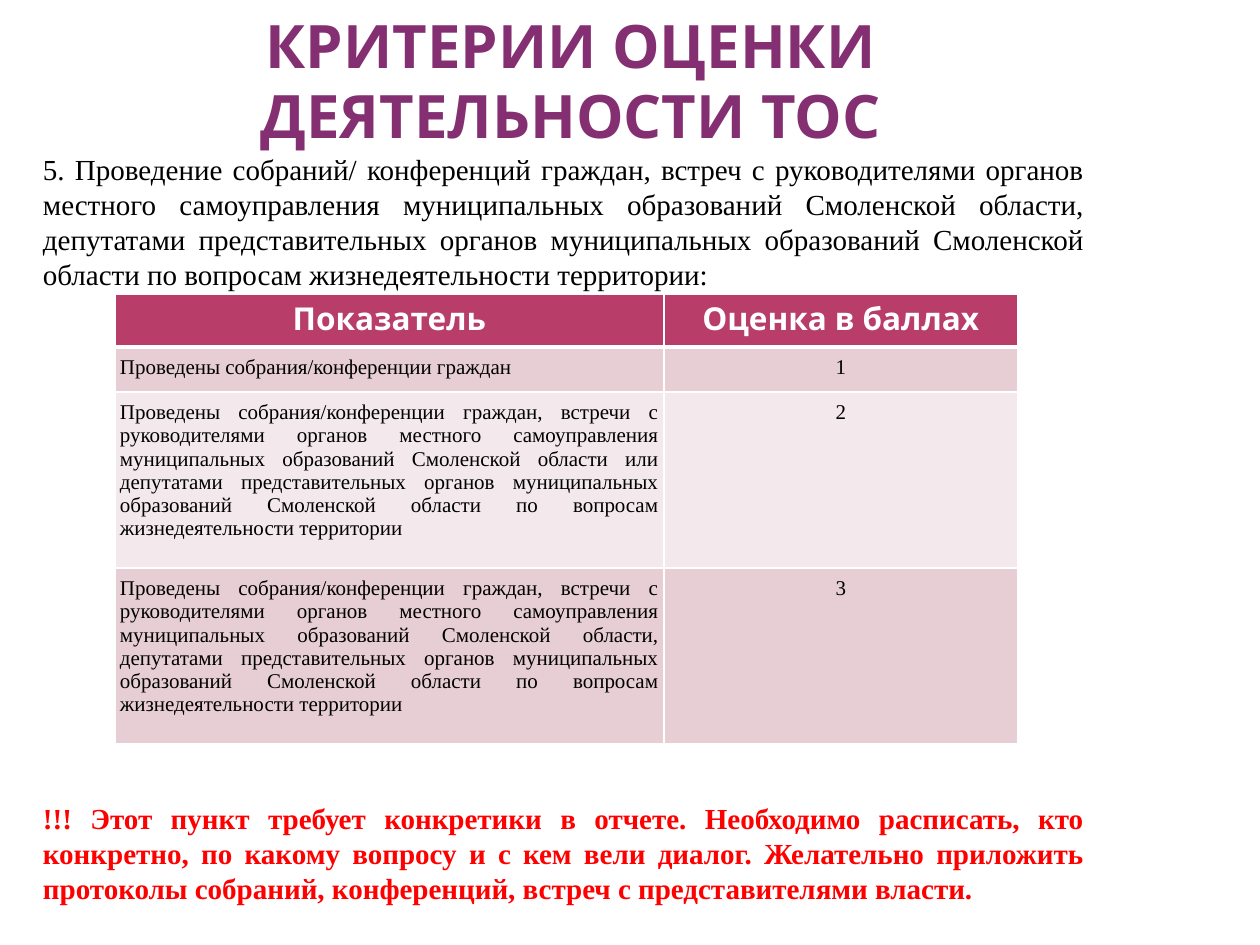
from pptx import Presentation
from pptx.dml.color import RGBColor
from pptx.enum.text import MSO_ANCHOR as Anchor, PP_ALIGN as Align
from pptx.oxml import parse_xml
from pptx.oxml.ns import nsdecls
from pptx.util import Pt

PX = 914400 // 126
SERIF, SANS = "Times New Roman", "Karla"


def px(n):
    return n * PX


def rgb(code):
    return RGBColor.from_string(code)


def put(para, text, size=12, font=SERIF, color="000000", bold=False,
        align=Align.JUSTIFY, line=None, before=0, indent=0):
    para.alignment = align
    para.space_before = Pt(before)
    if line:
        para.line_spacing = Pt(line)
    if indent:
        para._p.get_or_add_pPr().set("marL", str(px(indent)))
    run = para.add_run()
    run.text = text
    run.font.size = Pt(size)
    run.font.name = font
    run.font.bold = bold
    run.font.color.rgb = rgb(color)


class Deck:
    head, bands, rule = "B83D68", ("E6CED4", "F3E8EB"), "FFFFFF"

    def __init__(self, wide, high):
        self.prs = Presentation()
        self.prs.slide_width, self.prs.slide_height = px(wide), px(high)
        self.slide = self.prs.slides.add_slide(self.prs.slide_layouts[6])

    def box(self, x, y, w, h, paras, anchor=Anchor.TOP, pad=(13, 6)):
        frame = self.slide.shapes.add_textbox(px(x), px(y), px(w), px(h)).text_frame
        frame.word_wrap = True
        frame.vertical_anchor = anchor
        frame.margin_left = frame.margin_right = px(pad[0])
        frame.margin_top = frame.margin_bottom = px(pad[1])
        for i, (text, style) in enumerate(paras):
            put(frame.add_paragraph() if i else frame.paragraphs[0], text, **style)

    def edge(self, cell, side, width):
        cell._tc.get_or_add_tcPr().append(parse_xml(
            f'<a:ln{side} {nsdecls("a")} w="{Pt(width)}"><a:solidFill>'
            f'<a:srgbClr val="{self.rule}"/></a:solidFill></a:ln{side}>'))

    def cell(self, cell, text, row, col):
        for side in "LRTB":
            thick = (row, side) in ((0, "B"), (1, "T"))
            self.edge(cell, side, 3 if thick else 1)
        cell.fill.solid()
        cell.fill.fore_color.rgb = rgb(self.bands[(row - 1) % 2] if row else self.head)
        cell.margin_left = cell.margin_right = px(5 if row else 13)
        cell.margin_top = cell.margin_bottom = px(9 if row else 6)
        para = cell.text_frame.paragraphs[0]
        if row:
            put(para, text, line=13.3, align=Align.CENTER if col else Align.JUSTIFY)
        else:
            put(para, text, size=18, font=SANS, color="FFFFFF", bold=True,
                align=Align.CENTER, line=22)

    def table(self, x, y, cols, rows, data):
        grid = self.slide.shapes.add_table(
            len(rows), len(cols), px(x), px(y), px(sum(cols)), px(sum(rows))).table
        for col, w in zip(grid.columns, cols):
            col.width = px(w)
        for row, h in zip(grid.rows, rows):
            row.height = px(h)
        for r, texts in enumerate(data):
            for c, text in enumerate(texts):
                self.cell(grid.cell(r, c), text, r, c)


def main():
    deck = Deck(1260, 945)

    # Title
    deck.box(25, 26, 1091, 125, [
        ("КРИТЕРИИ ОЦЕНКИ ДЕЯТЕЛЬНОСТИ ТОС",
         dict(size=34.2, font=SANS, color="852F73", bold=True,
              align=Align.CENTER, line=40.5)),
    ], anchor=Anchor.BOTTOM, pad=(6, 0))

    # Criterion above the table, warning below it
    body = dict(size=16.6, line=20, indent=5)
    deck.box(25, 145, 1071, 764, [
        ("5. Проведение собраний/ конференций граждан, встреч с руководителями "
         "органов местного самоуправления муниципальных образований Смоленской "
         "области, депутатами представительных органов муниципальных образований "
         "Смоленской области по вопросам жизнедеятельности территории:", body),
        ("!!! Этот пункт требует конкретики в отчете. Необходимо расписать, кто "
         "конкретно, по какому вопросу и с кем вели диалог. Желательно приложить "
         "протоколы собраний, конференций, встреч с представителями власти.",
         dict(body, color="FF0000", bold=True, before=291)),
    ])

    # Score table
    held = "Проведены собрания/конференции граждан"
    meet = (held + ", встречи с руководителями органов местного самоуправления "
            "муниципальных образований Смоленской области{} депутатами "
            "представительных органов муниципальных образований Смоленской "
            "области по вопросам жизнедеятельности территории")
    deck.table(115, 294, (549, 354), (53, 45, 176, 176), [
        ("Показатель", "Оценка в баллах"),
        (held, "1"),
        (meet.format(" или"), "2"),
        (meet.format(","), "3"),
    ])

    deck.prs.save("out.pptx")


if __name__ == "__main__":
    main()
